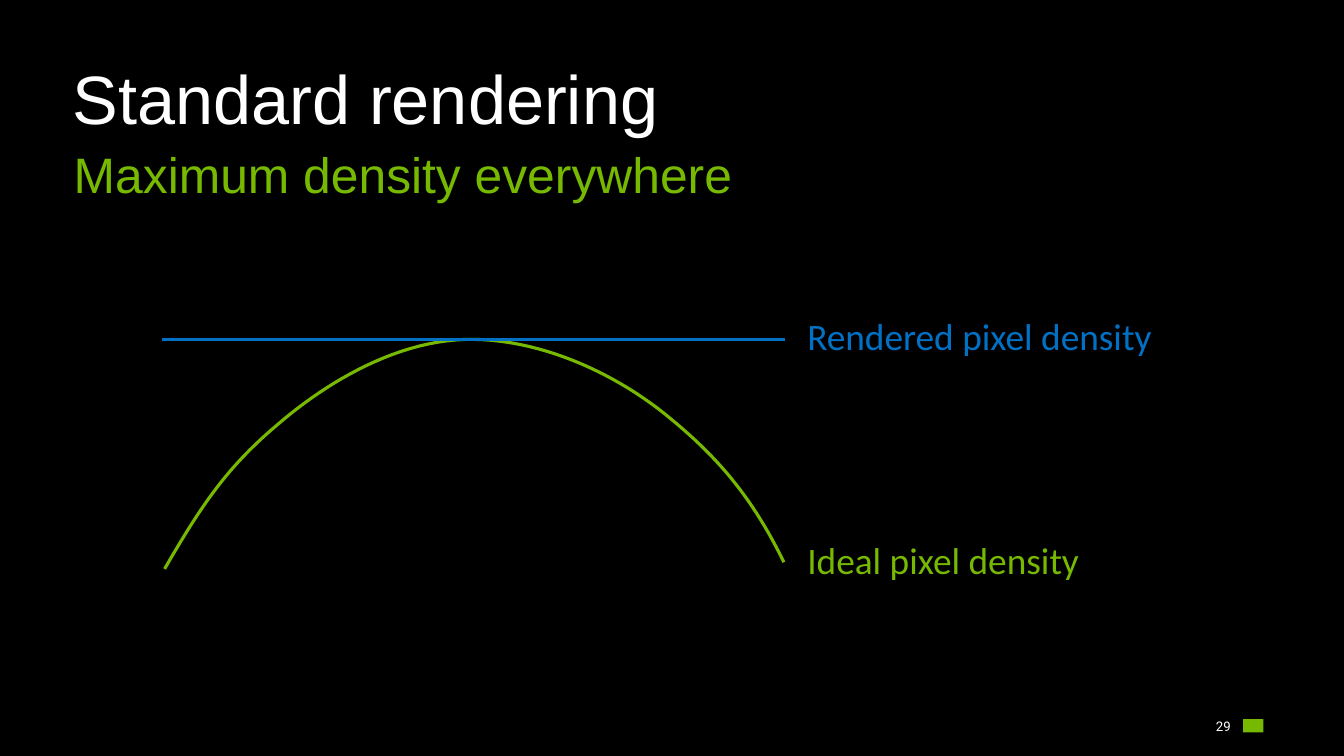
"""Build the slide comparing rendered and ideal pixel density."""
from dataclasses import dataclass

from pptx import Presentation
from pptx.dml.color import RGBColor
from pptx.enum import shapes, text
from pptx.oxml import xmlchemy
from pptx.util import Inches, Pt

BLACK, WHITE, GREEN, BLUE = "000000", "FFFFFF", "76B900", "0071C5"
CURVE_START = (1.47, 5.08)
CURVE = [
    ((1.81, 4.49), (2.04, 4.16), (2.48, 3.79)),
    ((2.92, 3.41), (3.57, 3.02), (4.23, 3.03)),
    ((4.89, 3.04), (5.55, 3.37), (5.99, 3.74)),
    ((6.44, 4.11), (6.73, 4.47), (7.00, 5.02)),
]
STEPS = 24


@dataclass
class Panel:
    left: float
    top: float
    width: float
    height: float
    color: str


@dataclass
class Label:
    text: str
    left: float
    top: float
    width: float
    height: float
    size: float
    font: str
    color: str
    anchor: text.MSO_ANCHOR = text.MSO_ANCHOR.TOP
    align: text.PP_ALIGN = text.PP_ALIGN.LEFT
    inset: tuple[float, float] = (0.1, 0.05)
    spacing: float = 0.9


PANELS = [
    Panel(0, 0, 12, 6.75, BLACK),
    Panel(11.1, 6.42, 0.18, 0.12, GREEN),
]
LABELS = [
    Label("29", 10.68, 6.39, 0.31, 0.18, 8.5, "Roboto", WHITE,
          text.MSO_ANCHOR.MIDDLE, text.PP_ALIGN.RIGHT, (0, 0), 1.0),
    Label("Standard rendering", 0.55, 0.52, 10.91, 0.77, 44, "Arial", WHITE,
          text.MSO_ANCHOR.BOTTOM),
    Label("Maximum density everywhere", 0.56, 1.29, 10.91, 0.57, 32, "Arial", GREEN),
    Label("Ideal pixel density", 7.11, 4.79, 4.24, 0.63, 24, "Calibri", GREEN),
    Label("Rendered pixel density", 7.11, 2.79, 4.24, 0.63, 24, "Calibri", BLUE),
]


def rgb(color: str) -> RGBColor:
    return RGBColor.from_string(color)


def add_panel(slide, panel: Panel) -> None:
    sp = slide.shapes.add_shape(shapes.MSO_SHAPE.RECTANGLE, Inches(panel.left),
                                Inches(panel.top), Inches(panel.width),
                                Inches(panel.height))
    sp.shadow.inherit = False
    sp.fill.solid()
    sp.fill.fore_color.rgb = rgb(panel.color)
    sp.line.fill.background()


def add_label(slide, label: Label) -> None:
    box = slide.shapes.add_textbox(Inches(label.left), Inches(label.top),
                                   Inches(label.width), Inches(label.height))
    tf = box.text_frame
    tf.word_wrap = True
    tf.vertical_anchor = label.anchor
    tf.margin_left = tf.margin_right = Inches(label.inset[0])
    tf.margin_top = tf.margin_bottom = Inches(label.inset[1])
    p = tf.paragraphs[0]
    p.text = label.text
    p.alignment = label.align
    p.line_spacing = label.spacing
    p.font.size = Pt(label.size)
    p.font.name = label.font
    p.font.color.rgb = rgb(label.color)


def bezier_point(points, t: float) -> tuple[int, int]:
    weights = ((1 - t) ** 3, 3 * t * (1 - t) ** 2, 3 * t ** 2 * (1 - t), t ** 3)
    x, y = (sum(w * c for w, c in zip(weights, axis)) for axis in zip(*points))
    return Inches(x), Inches(y)


def add_curve(slide, color: str, width: float) -> None:
    start = CURVE_START
    builder = slide.shapes.build_freeform(Inches(start[0]), Inches(start[1]))
    for segment in CURVE:
        builder.add_line_segments(
            [bezier_point((start, *segment), i / STEPS) for i in range(1, STEPS + 1)],
            close=False)
        start = segment[-1]
    sp = builder.convert_to_shape()
    sp.shadow.inherit = False
    sp.fill.background()
    sp.line.color.rgb = rgb(color)
    sp.line.width = Pt(width)


def add_level(slide, color: str, width: float) -> None:
    line = slide.shapes.add_connector(shapes.MSO_CONNECTOR.STRAIGHT, Inches(1.45),
                                      Inches(3.03), Inches(7.01), Inches(3.03))
    line.line.color.rgb = rgb(color)
    line.line.width = Pt(width)
    line._element.spPr.append(xmlchemy.OxmlElement("a:effectLst"))


def main() -> None:
    prs = Presentation()
    prs.slide_width, prs.slide_height = Inches(12), Inches(6.75)
    s = prs.slides.add_slide(prs.slide_layouts[6])
    for panel in PANELS:
        add_panel(s, panel)
    for label in LABELS:
        add_label(s, label)
    add_curve(s, GREEN, 2)
    add_level(s, BLUE, 2.25)
    prs.save("out.pptx")


if __name__ == "__main__":
    main()
